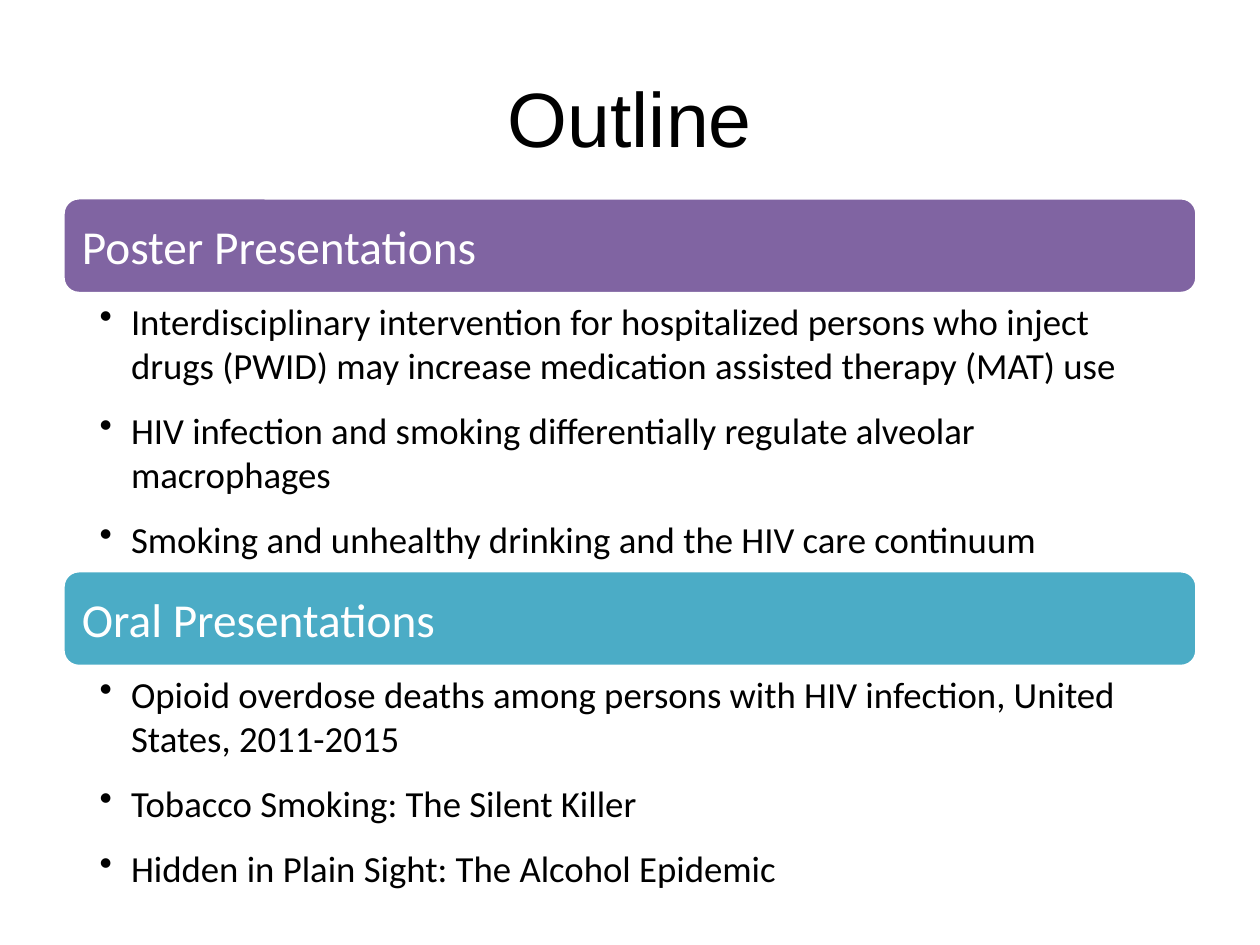
from dataclasses import dataclass

from lxml import etree
from pptx import Presentation
from pptx import util as u
from pptx.dml.color import RGBColor
from pptx.enum import shapes, text
from pptx.oxml.ns import qn


@dataclass(frozen=True)
class Theme:
    ink: str = "000000"
    paper: str = "FFFFFF"
    poster: str = "8064A2"
    oral: str = "4BACC6"
    title_font: str = "Arial"
    body_font: str = "Calibri"
    title_size: int = 44
    header_size: int = 27
    bullet_size: int = 21
    gap: int = 12


theme = Theme()
left, width, bar_height, inset = 0.5, 9, 0.76, 0.04

sections = [
    (1.57, 2.2, theme.poster, "Poster Presentations", [
        "Interdisciplinary intervention for hospitalized persons who inject "
        "drugs (PWID) may increase medication assisted therapy (MAT) use",
        "HIV infection and smoking differentially regulate alveolar macrophages",
        "Smoking and unhealthy drinking and the HIV care continuum",
    ]),
    (4.53, 1.83, theme.oral, "Oral Presentations", [
        "Opioid overdose deaths among persons with HIV infection, "
        "United States, 2011-2015",
        "Tobacco Smoking: The Silent Killer",
        "Hidden in Plain Sight: The Alcohol Epidemic",
    ]),
]


def add_box(s, x, y, w, h, margins, anchor):
    sp = s.shapes.add_textbox(u.Inches(x), u.Inches(y), u.Inches(w), u.Inches(h))
    tf = sp.text_frame
    tf.word_wrap = True
    tf.vertical_anchor = anchor
    tf.margin_left, tf.margin_top, tf.margin_right, tf.margin_bottom = map(u.Inches, margins)
    return tf


def add_run(p, words, font, size, color):
    r = p.add_run()
    r.text = words
    r.font.name = font
    r.font.size = u.Pt(size)
    r.font.color.rgb = RGBColor.from_string(color)


prs = Presentation()
prs.slide_width, prs.slide_height = u.Inches(10), u.Inches(7.5)
s = prs.slides.add_slide(prs.slide_layouts[6])

tf = add_box(s, left, 0.3, width, 1.25, (0.1, 0.05, 0.1, 0.05), text.MSO_ANCHOR.MIDDLE)
p = tf.paragraphs[0]
p.alignment = text.PP_ALIGN.CENTER
add_run(p, "Outline", theme.title_font, theme.title_size, theme.ink)

for top, list_height, color, header, bullets in sections:
    sp = s.shapes.add_shape(
        shapes.MSO_SHAPE.ROUNDED_RECTANGLE,
        u.Inches(left), u.Inches(top), u.Inches(width), u.Inches(bar_height),
    )
    sp.shadow.inherit = False
    sp.fill.solid()
    sp.fill.fore_color.rgb = RGBColor.from_string(color)
    sp.line.color.rgb = RGBColor.from_string(theme.paper)
    sp.line.width = u.Pt(2)

    tf = add_box(s, left + inset, top + inset, width - 2 * inset, bar_height - 2 * inset,
                 (0.11, 0.11, 0.11, 0.11), text.MSO_ANCHOR.MIDDLE)
    p = tf.paragraphs[0]
    p.space_after = u.Pt(theme.gap)
    add_run(p, header, theme.body_font, theme.header_size, theme.paper)

    tf = add_box(s, left, top + bar_height, width, list_height,
                 (0.29, 0.04, 0.21, 0.04), text.MSO_ANCHOR.TOP)
    for i, bullet in enumerate(bullets):
        p = tf.add_paragraph() if i else tf.paragraphs[0]
        p.level = 1
        p.space_after = u.Pt(theme.gap)
        pPr = p._p.get_or_add_pPr()
        pPr.set("marL", str(u.Inches(0.25)))
        pPr.set("indent", str(-u.Inches(0.25)))
        etree.SubElement(pPr, qn("a:buChar"), char="•")
        add_run(p, bullet, theme.body_font, theme.bullet_size, theme.ink)

prs.save("out.pptx")
